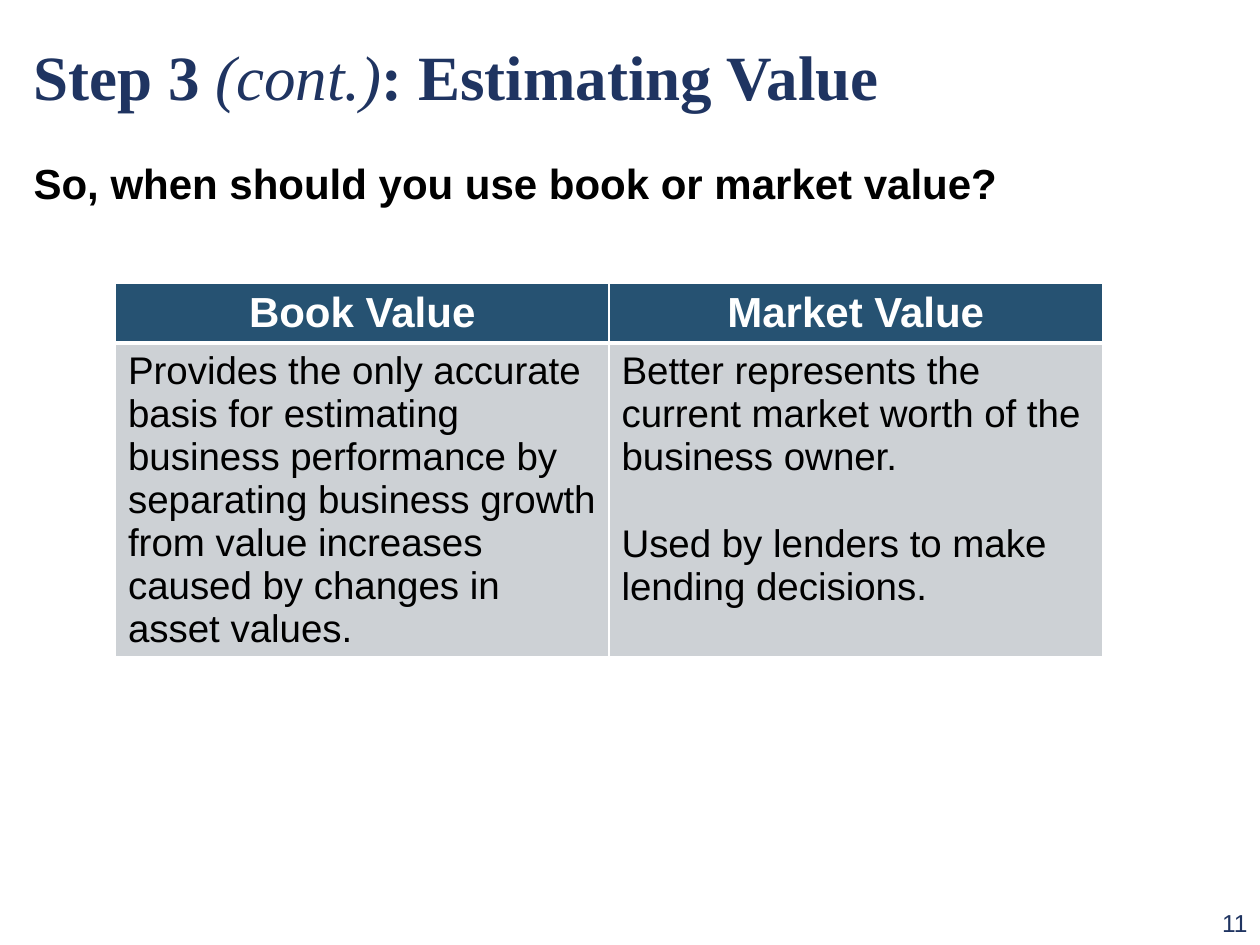
from dataclasses import dataclass

from lxml import etree
from pptx import Presentation
from pptx.dml.color import RGBColor
from pptx.enum.text import MSO_ANCHOR, MSO_AUTO_SIZE, PP_ALIGN
from pptx.oxml.ns import qn
from pptx.util import Inches, Pt

LEFT, CENTER, RIGHT = PP_ALIGN.LEFT, PP_ALIGN.CENTER, PP_ALIGN.RIGHT
TOP, MIDDLE = MSO_ANCHOR.TOP, MSO_ANCHOR.MIDDLE
NO_FIT = MSO_AUTO_SIZE.NONE

COLORS = {
    "navy": "1F3461",
    "header": "265272",
    "body": "CDD1D5",
    "black": "000000",
    "white": "FFFFFF",
}
SANS, SERIF = "Arial", "Times New Roman"

# The page is a grid of 120 columns by 90 rows
WIDTH, HEIGHT = Inches(10), Inches(7.5)
COLUMN, ROW = WIDTH / 120, HEIGHT / 90


@dataclass(frozen=True)
class Area:
    column: float
    row: float
    columns: float
    rows: float

    def lengths(self) -> tuple:
        return (int(self.column * COLUMN), int(self.row * ROW),
                int(self.columns * COLUMN), int(self.rows * ROW))


@dataclass(frozen=True)
class ValueColumn:
    heading: str
    points: tuple


TITLE_AREA = Area(2, 2, 105, 10.4)
BODY_AREA = Area(2, 14.4, 108, 66.6)
TABLE_AREA = Area(11, 27, 94, 35.5)
NUMBER_AREA = Area(113, 85.9, 7, 4.1)
HEADER_ROWS = 5.6

VALUE_COLUMNS = (
    ValueColumn("Book Value", (
        "Provides the only accurate basis for estimating business performance "
        "by separating business growth from value increases caused by changes "
        "in asset values.",
    )),
    ValueColumn("Market Value", (
        "Better represents the current market worth of the business owner.",
        "Used by lenders to make lending decisions.",
    )),
)


def add_span(para, text: str, *, size: float, color: str, font: str = SANS,
             bold: bool = False, italic: bool = False) -> None:
    span = para.add_run()
    span.text = text
    span.font.name, span.font.size = font, Pt(size)
    span.font.bold, span.font.italic = bold, italic
    span.font.color.rgb = RGBColor.from_string(COLORS[color])


def write(frame, paragraphs: tuple, *, align=LEFT, gap: float = 0, **style) -> None:
    for index, text in enumerate(paragraphs):
        para = frame.add_paragraph() if index else frame.paragraphs[0]
        para.alignment = align
        para.space_before = Pt(gap if index else 0)
        add_span(para, text, **style)


def place(box, area: Area, *, anchor=TOP, wrap: bool = True):
    box.left, box.top, box.width, box.height = area.lengths()
    frame = box.text_frame
    frame.auto_size, frame.word_wrap = NO_FIT, wrap
    frame.vertical_anchor = anchor
    return frame


def paint_cell(cell, fill: str, bottom_width: float) -> None:
    properties = cell._tc.get_or_add_tcPr()
    widths = {"lnL": 1, "lnR": 1, "lnT": 1, "lnB": bottom_width}
    for side, width in widths.items():
        line = etree.SubElement(properties, qn(f"a:{side}"), w=str(Pt(width)))
        solid = etree.SubElement(line, qn("a:solidFill"))
        etree.SubElement(solid, qn("a:srgbClr"), val=COLORS["white"])
    cell.fill.solid()
    cell.fill.fore_color.rgb = RGBColor.from_string(COLORS[fill])


def add_value_table(page, area: Area, columns: tuple) -> None:
    table = page.shapes.add_table(2, len(columns), *area.lengths()).table
    table.rows[0].height = int(HEADER_ROWS * ROW)
    table.rows[1].height = int((area.rows - HEADER_ROWS) * ROW)
    for index, column in enumerate(columns):
        header, body = table.cell(0, index), table.cell(1, index)
        paint_cell(header, "header", bottom_width=3)
        paint_cell(body, "body", bottom_width=1)
        write(header.text_frame, (column.heading,), align=CENTER,
              size=24, color="white", bold=True)
        write(body.text_frame, column.points, gap=25, size=22, color="black")
    # The line under the header is shared by both rows
    for cell in table.rows[1].cells:
        cell._tc.tcPr.find(qn("a:lnT")).set("w", str(Pt(3)))


def main() -> None:
    deck = Presentation()
    deck.slide_width, deck.slide_height = WIDTH, HEIGHT
    page = deck.slides.add_slide(deck.slide_layouts[1])

    # Title
    title = place(page.shapes.title, TITLE_AREA, anchor=MIDDLE).paragraphs[0]
    title.alignment = LEFT
    heading = {"size": 36, "color": "navy", "font": SERIF}
    add_span(title, "Step 3 ", bold=True, **heading)
    add_span(title, "(cont.)", italic=True, **heading)
    add_span(title, ": Estimating Value", bold=True, **heading)

    # Question, without a bullet
    question = place(page.placeholders[1], BODY_AREA)
    properties = question.paragraphs[0]._p.get_or_add_pPr()
    properties.set("marL", "0")
    properties.set("indent", "0")
    etree.SubElement(properties, qn("a:buNone"))
    write(question, ("So, when should you use book or market value?",),
          size=24, color="black", bold=True)

    # Comparison table
    add_value_table(page, TABLE_AREA, VALUE_COLUMNS)

    # Page number
    number = page.shapes.add_textbox(*NUMBER_AREA.lengths())
    write(place(number, NUMBER_AREA), ("11",), align=RIGHT, size=14, color="navy")

    deck.save("out.pptx")


if __name__ == "__main__":
    main()
